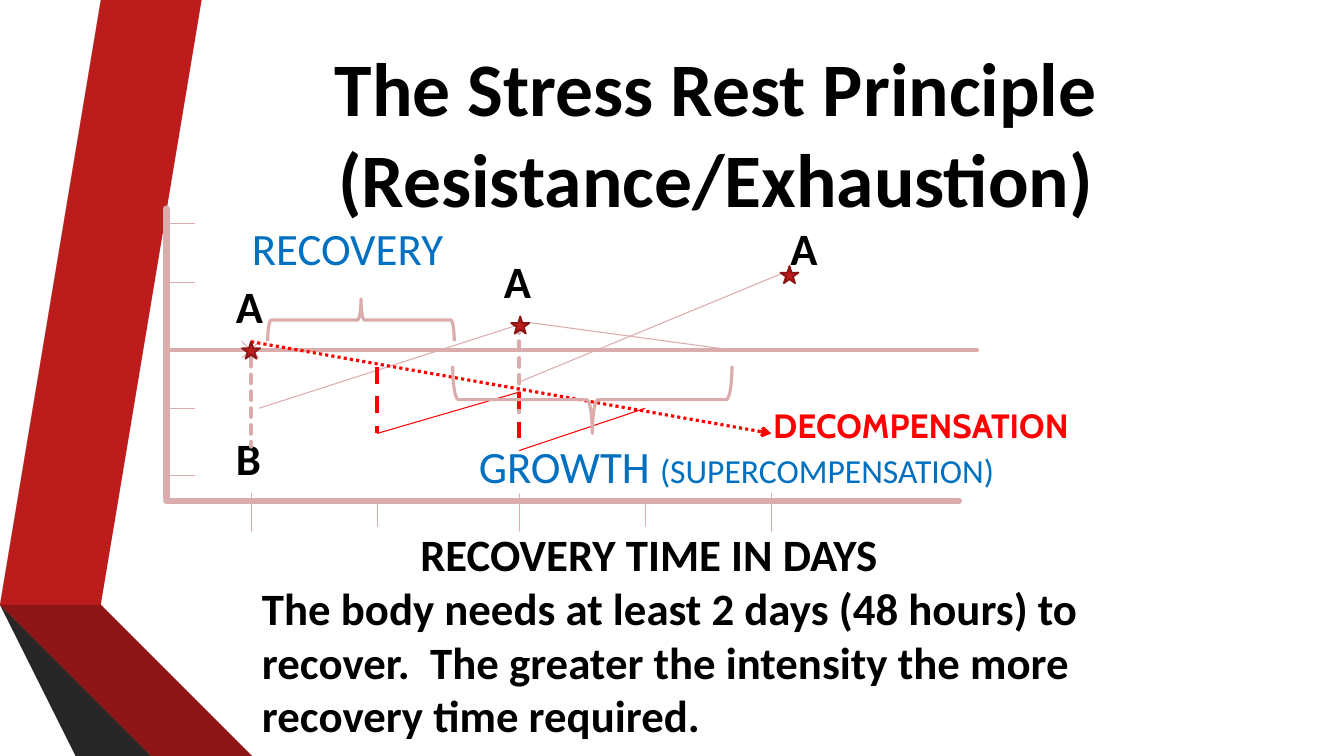
from lxml import etree
from pptx import Presentation
from pptx import util as u
from pptx.dml.color import RGBColor
from pptx.enum import dml, shapes, text
from pptx.oxml import ns

COLORS = {
    "black": "000000", "blue": "0070C0", "alert": "FF0000", "pink": "DAACAC",
    "red": "BC1C1C", "red_line": "8B1515", "red_dark": "8D1515", "red_edge": "5E0E0E",
    "gray": "595959", "gray_dark": "404040", "gray_edge": "262626",
}


def rgb(name):
    """Return the named palette colour."""
    return RGBColor.from_string(COLORS[name])


def add_run(paragraph, content, size=32, color="black", bold=True, font="Calibri"):
    """Append formatted text to a paragraph."""
    run = paragraph.add_run()
    run.text = content
    run.font.name = font
    run.font.size = u.Pt(size)
    run.font.bold = bold
    run.font.color.rgb = rgb(color)


def add_label(slide, content, left, top, width, height=0.64, **style):
    """Add a wrapping text box and return its paragraph."""
    box = slide.shapes.add_textbox(*map(u.Inches, (left, top, width, height)))
    box.text_frame.word_wrap = True
    box.text_frame.auto_size = text.MSO_AUTO_SIZE.SHAPE_TO_FIT_TEXT
    paragraph = box.text_frame.paragraphs[0]
    add_run(paragraph, content, **style)
    return paragraph


def add_line(slide, start, end, color="pink", width=0.75, dash=None, arrow=False):
    """Draw a straight line between two points in inches."""
    line = slide.shapes.add_connector(
        shapes.MSO_CONNECTOR.STRAIGHT, *map(u.Inches, (*start, *end)))
    line.line.color.rgb = rgb(color)
    line.line.width = u.Pt(width)
    if dash:
        line.line.dash_style = dash
    outline = line.line._get_or_add_ln()
    if color == "pink":
        outline.set("cap", "rnd")
    if arrow:
        etree.SubElement(outline, ns.qn("a:tailEnd"), type="arrow")
    etree.SubElement(line._element.spPr, ns.qn("a:effectLst"))


def add_preset(slide, kind, box, line, width, fill=None, rotation=0):
    """Add a preset shape with an outline and an optional fill."""
    shape = slide.shapes.add_shape(kind, *map(u.Inches, box))
    shape.shadow.inherit = False
    shape.rotation = rotation
    shape.line.color.rgb = rgb(line)
    shape.line.width = u.Pt(width)
    if fill:
        shape.fill.solid()
        shape.fill.fore_color.rgb = rgb(fill)
    else:
        shape.fill.background()


def add_ribbons(slide, left, top):
    """Draw the folded gray and red ribbons from the given corner."""
    ribbons = [
        ("red", [(0.34, 5.78), (0.61, 5.83), (1.57, 0), (1.29, 0)]),
        ("gray", [(1.23, 0), (0.95, 0), (0, 5.73), (0.28, 5.77)]),
        ("gray_edge", [(0, 5.73), (1.29, 7.5), (1.35, 7.5)]),
        ("red_edge", [(0.34, 5.79), (1.92, 7.5), (1.98, 7.5)]),
        ("red_dark", [(0.34, 5.78), (1.98, 7.5), (2.67, 7.5), (0.61, 5.83)]),
        ("gray_dark", [(1.86, 7.5), (0.32, 5.83), (0.28, 5.77), (0, 5.73), (1.35, 7.5)]),
    ]
    for color, outline in ribbons:
        points = [(left + x, top + y) for x, y in outline]
        builder = slide.shapes.build_freeform(*points[0], scale=u.Inches(1))
        builder.add_line_segments(points[1:], close=True)
        shape = builder.convert_to_shape()
        shape.shadow.inherit = False
        shape.fill.solid()
        shape.fill.fore_color.rgb = rgb(color)
        shape.line.fill.background()


def add_title(slide, left, top, width, height):
    """Place and format the slide title."""
    title = slide.shapes.title
    title.left, title.top, title.width, title.height = map(
        u.Inches, (left, top, width, height))
    frame = title.text_frame
    frame.word_wrap = True
    frame.auto_size = text.MSO_AUTO_SIZE.NONE
    frame.vertical_anchor = text.MSO_ANCHOR.MIDDLE
    frame.margin_bottom = u.Inches(0.85)
    paragraph = frame.paragraphs[0]
    paragraph.alignment = text.PP_ALIGN.CENTER
    add_run(paragraph, "The Stress Rest Principle (Resistance/Exhaustion)", size=54)


def add_axes(slide, left, top, width, height):
    """Draw the axes, the baseline and the tick marks."""
    bottom = top + height
    baseline = top + 1.4
    add_line(slide, (left, top), (left, bottom - 0.03), width=4.5)
    add_line(slide, (left, baseline), (left + width, baseline), width=3)
    add_line(slide, (left, bottom), (left + width - 0.18, bottom), width=4.5)
    for offset in (0.15, 0.73, 1.98, 2.65):
        add_line(slide, (left, top + offset), (left + 0.28, top + offset))
    for index, offset in enumerate((0.84, 2.09, 3.5, 4.75, 6)):
        above, below = (0, 0.25) if index % 2 else (0.07, 0.3)
        add_line(slide, (left + offset, bottom - above), (left + offset, bottom + below))


def add_curves(slide, left, top):
    """Draw the stress and recovery lines, braces and stars."""
    dash = dml.MSO_LINE
    pink_dash = {"width": 3, "dash": dash.SQUARE_DOT}
    red_dash = {"color": "alert", "width": 3, "dash": dash.DASH}
    curves = [
        ((0.75, 1.32), (0.92, 1.48), {}),
        ((0.92, 1.32), (0.75, 1.48), {}),
        ((0.84, 1.48), (0.84, 2.36), pink_dash),
        ((0.92, 1.98), (3.5, 1.15), {}),
        ((3.5, 1.15), (3.5, 2.02), pink_dash),
        ((3.5, 1.72), (6.09, 0.65), {}),
        ((3.6, 1.13), (5.59, 1.4), {}),
        ((2.09, 1.57), (2.09, 2.23), red_dash),
        ((2.09, 2.23), (3.5, 1.82), {"color": "alert"}),
        ((3.5, 1.82), (3.5, 2.4), red_dash),
        ((3.5, 2.4), (4.75, 1.98), {"color": "alert"}),
        ((0.84, 1.32), (6, 2.23),
         {"color": "alert", "width": 2.25, "dash": dash.ROUND_DOT, "arrow": True}),
    ]
    for (x1, y1), (x2, y2), style in curves:
        add_line(slide, (left + x1, top + y1), (left + x2, top + y2), **style)
    kinds = shapes.MSO_SHAPE
    for kind, x, y, width, height in (
            (kinds.LEFT_BRACE, 1.72, 0.18, 0.42, 1.85),
            (kinds.RIGHT_BRACE, 3.89, 0.51, 0.67, 2.77)):
        add_preset(slide, kind, (left + x, top + y, width, height), "pink", 2.25, rotation=90)
    for x, y in ((6.09, 0.57), (3.42, 1.07), (0.75, 1.32)):
        add_preset(slide, kinds.STAR_5_POINT, (left + x, top + y, 0.18, 0.17),
                   "red_line", 1.25, fill="red")


def add_chart_labels(slide, left, top):
    """Write the point letters and phase names."""
    for letter, x, y in (("A", 0.59, 0.65), ("B", 0.59, 2.15),
                         ("A", 3.25, 0.4), ("A", 6.09, 0.07)):
        add_label(slide, letter, left + x, top + y, 0.46)
    phase = {"color": "blue", "bold": False}
    add_label(slide, "RECOVERY", left + 0.75, top + 0.07, 2.77, **phase)
    growth = add_label(slide, "GROWTH ", left + 3, top + 2.23, 6.29, **phase)
    add_run(growth, "(SUPERCOMPENSATION)", size=24, **phase)
    add_label(slide, "DECOMPENSATION", left + 5.92, top + 1.9, 3.33, 0.5,
              size=24, color="alert", font="Cabin")


def add_captions(slide, left, top):
    """Write the axis name and the closing statement."""
    add_label(slide, "RECOVERY TIME IN DAYS", left + 1.57, top, 5.17)
    add_label(slide, "The body needs at least 2 days (48 hours) to recover.  "
              "The greater the intensity the more recovery time required.",
              left, top + 0.53, 8.75, 1.72)


def main():
    """Build and save the stress and rest slide."""
    presentation = Presentation()
    presentation.slide_width = u.Inches(13.33)
    presentation.slide_height = u.Inches(7.5)
    slide = presentation.slides.add_slide(presentation.slide_layouts[5])
    add_ribbons(slide, 0.16, 0)
    add_title(slide, 1.62, 0.75, 10.96, 1.92)
    add_captions(slide, 2.5, 5.18)
    add_axes(slide, 1.65, 2.07, 8.04, 2.9)
    add_chart_labels(slide, 1.65, 2.07)
    add_curves(slide, 1.65, 2.07)
    presentation.save("out.pptx")


if __name__ == "__main__":
    main()
